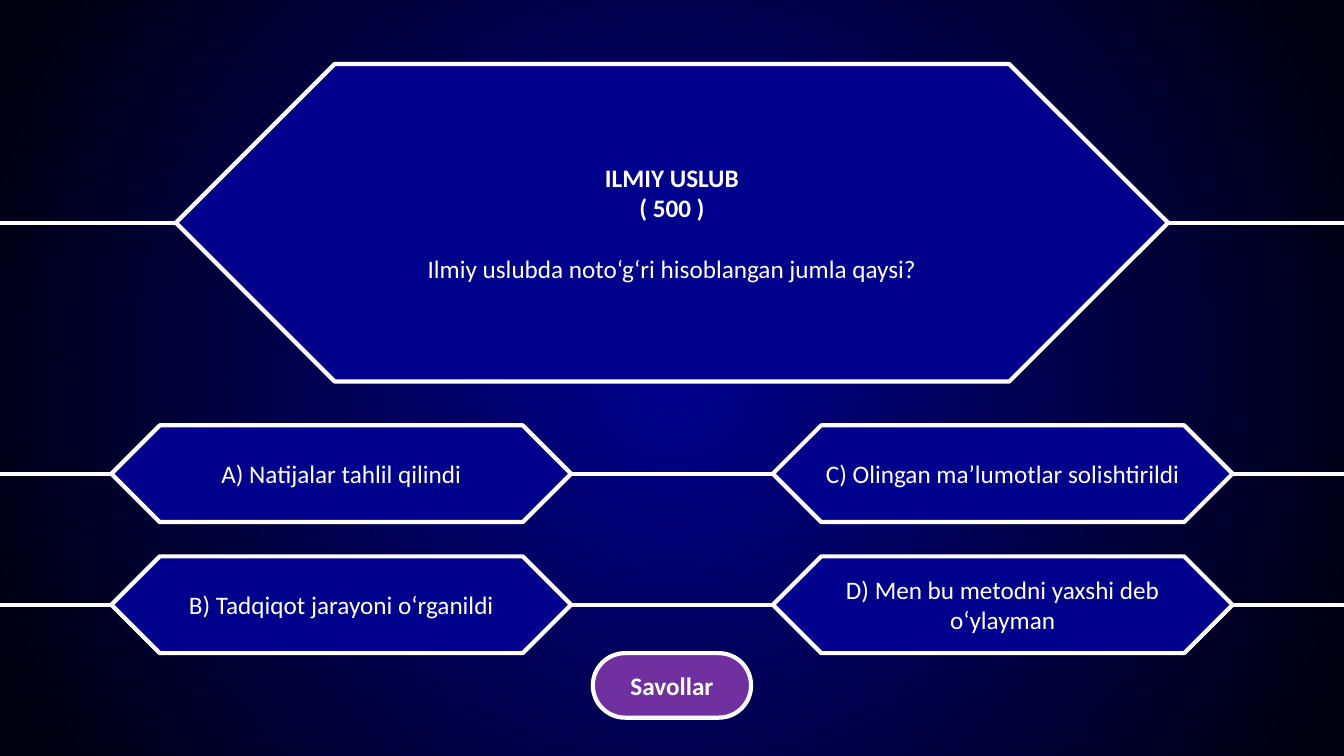
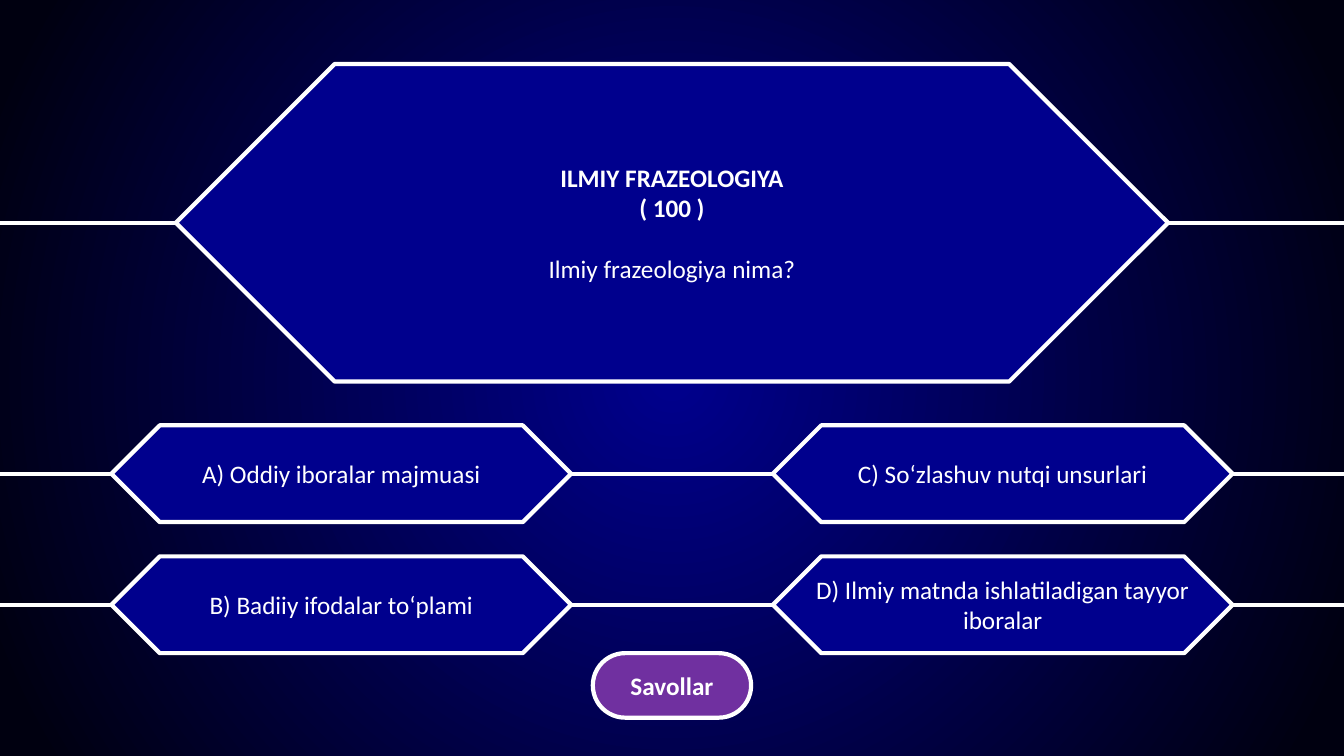
"""Build two quiz slides, each with a question, four answers and a button."""
from dataclasses import dataclass

from lxml.etree import SubElement
from pptx import Presentation
from pptx.dml.color import RGBColor
from pptx.enum.shapes import MSO_CONNECTOR as Connector, MSO_SHAPE as Shape
from pptx.enum.text import MSO_ANCHOR as Anchor, PP_ALIGN as Align
from pptx.oxml.ns import qn
from pptx.shapes.autoshape import Shape as AutoShape
from pptx.slide import Slide
from pptx.util import Inches, Pt

WHITE = RGBColor(0xFF, 0xFF, 0xFF)
BLUE = RGBColor(0x00, 0x00, 0x8D)
NIGHT = RGBColor(0x00, 0x00, 0x10)
PURPLE = RGBColor(0x70, 0x30, 0xA0)

FONT = "Calibri"
TEXT_SIZE = Pt(18)
LINE_WIDTH = Pt(3)
QUESTION_GAP = Pt(22)

SLIDE_WIDTH, SLIDE_HEIGHT = 13.33, 7.5
CENTRE = SLIDE_WIDTH / 2
QUESTION_WIDTH, QUESTION_HEIGHT, QUESTION_ROW = 9.84, 3.15, 2.21
ANSWER_WIDTH, ANSWER_HEIGHT = 4.56, 0.96
ANSWER_OFFSET = 3.28
ANSWER_COLUMNS = (CENTRE - ANSWER_OFFSET, CENTRE + ANSWER_OFFSET)
ANSWER_ROWS = (4.7, 6.0)
BUTTON_WIDTH, BUTTON_HEIGHT, BUTTON_ROW = 1.57, 0.64, 6.8
GLOW_SIZE, GLOW_BLUR = 0.3, 0.1


@dataclass(frozen=True)
class Line:
    """One paragraph of a panel."""
    text: str
    bold: bool = False
    gap: int = 0


@dataclass(frozen=True)
class Panel:
    """A filled shape placed by its centre, in inches."""
    centre_x: float
    centre_y: float
    width: float
    height: float
    kind: Shape = Shape.SNIP_2_DIAG_RECTANGLE
    fill: RGBColor = BLUE


@dataclass(frozen=True)
class Quiz:
    """The wording of one slide, answers running down each column."""
    topic: str
    points: int
    question: str
    answers: tuple[str, str, str, str]


QUIZZES = (
    Quiz("ILMIY USLUB", 500, "Ilmiy uslubda noto‘g‘ri hisoblangan jumla qaysi?", (
        "A) Natijalar tahlil qilindi",
        "B) Tadqiqot jarayoni o‘rganildi",
        "C) Olingan ma’lumotlar solishtirildi",
        "D) Men bu metodni yaxshi deb o‘ylayman",
    )),
    Quiz("ILMIY FRAZEOLOGIYA", 100, "Ilmiy frazeologiya nima?", (
        "A) Oddiy iboralar majmuasi",
        "B) Badiiy ifodalar to‘plami",
        "C) So‘zlashuv nutqi unsurlari",
        "D) Ilmiy matnda ishlatiladigan tayyor iboralar",
    )),
)


def paint_background(slide: Slide) -> None:
    """Fill the slide with a glow that darkens from its centre."""
    fill = slide.background.fill
    fill.gradient()
    for stop, color, position in zip(fill.gradient_stops, (BLUE, NIGHT), (0, 0.95)):
        stop.color.rgb = color
        stop.position = position
    gradient = slide.element.find(f".//{qn('a:gradFill')}")
    gradient.remove(gradient.find(qn("a:lin")))
    circle = SubElement(gradient, qn("a:path"), {"path": "circle"})
    SubElement(circle, qn("a:fillToRect"), dict.fromkeys("ltrb", "50000"))


def add_wire(slide: Slide, row: float) -> None:
    """Draw a line across the whole slide."""
    y = Inches(row)
    wire = slide.shapes.add_connector(
        Connector.STRAIGHT, Inches(SLIDE_WIDTH), y, 0, y)
    wire.line.color.rgb = WHITE
    wire.line.width = LINE_WIDTH
    SubElement(wire.element.spPr, qn("a:effectLst"))


def add_shape(slide: Slide, panel: Panel) -> AutoShape:
    """Add the filled shape of a panel."""
    shape = slide.shapes.add_shape(
        panel.kind,
        Inches(panel.centre_x - panel.width / 2),
        Inches(panel.centre_y - panel.height / 2),
        Inches(panel.width), Inches(panel.height))
    shape.shadow.inherit = False
    shape.fill.solid()
    shape.fill.fore_color.rgb = panel.fill
    return shape


def add_panel(slide: Slide, panel: Panel, *lines: Line) -> None:
    """Add an outlined panel with pointed or round ends and centred text."""
    shape = add_shape(slide, panel)
    for index in range(len(shape.adjustments)):
        shape.adjustments[index] = 0.5
    shape.line.color.rgb = WHITE
    shape.line.width = LINE_WIDTH
    frame = shape.text_frame
    frame.word_wrap = True
    frame.vertical_anchor = Anchor.MIDDLE
    frame.text = "\n".join(line.text for line in lines)
    for paragraph, line in zip(frame.paragraphs, lines):
        paragraph.alignment = Align.CENTER
        if line.gap:
            paragraph.space_before = line.gap
        font = paragraph.runs[0].font
        font.name, font.size, font.bold = FONT, TEXT_SIZE, line.bold
        font.color.rgb = WHITE


def add_glow(slide: Slide) -> None:
    """Place a soft light on the left tip of the question."""
    tip = CENTRE - QUESTION_WIDTH / 2
    glow = add_shape(slide, Panel(
        tip, QUESTION_ROW, GLOW_SIZE, GLOW_SIZE, Shape.OVAL, WHITE))
    glow.line.fill.background()
    effects = glow.element.spPr.find(qn("a:effectLst"))
    SubElement(effects, qn("a:softEdge"), {"rad": str(Inches(GLOW_BLUR))})


def add_quiz(slide: Slide, quiz: Quiz) -> None:
    """Draw one quiz slide."""
    paint_background(slide)
    for row in (*ANSWER_ROWS, QUESTION_ROW):
        add_wire(slide, row)
    places = [(x, y) for x in ANSWER_COLUMNS for y in ANSWER_ROWS]
    for (x, y), answer in zip(places, quiz.answers):
        add_panel(slide, Panel(x, y, ANSWER_WIDTH, ANSWER_HEIGHT), Line(answer))
    add_panel(
        slide, Panel(CENTRE, QUESTION_ROW, QUESTION_WIDTH, QUESTION_HEIGHT),
        Line(quiz.topic, bold=True),
        Line(f"( {quiz.points} )", bold=True),
        Line(quiz.question, gap=QUESTION_GAP))
    add_glow(slide)
    add_panel(
        slide, Panel(CENTRE, BUTTON_ROW, BUTTON_WIDTH, BUTTON_HEIGHT,
                     Shape.ROUNDED_RECTANGLE, PURPLE),
        Line("Savollar", bold=True))


def main() -> None:
    """Build and save the presentation."""
    presentation = Presentation()
    presentation.slide_width = Inches(SLIDE_WIDTH)
    presentation.slide_height = Inches(SLIDE_HEIGHT)
    blank = presentation.slide_layouts[6]
    for quiz in QUIZZES:
        add_quiz(presentation.slides.add_slide(blank), quiz)
    presentation.save("out.pptx")


if __name__ == "__main__":
    main()
